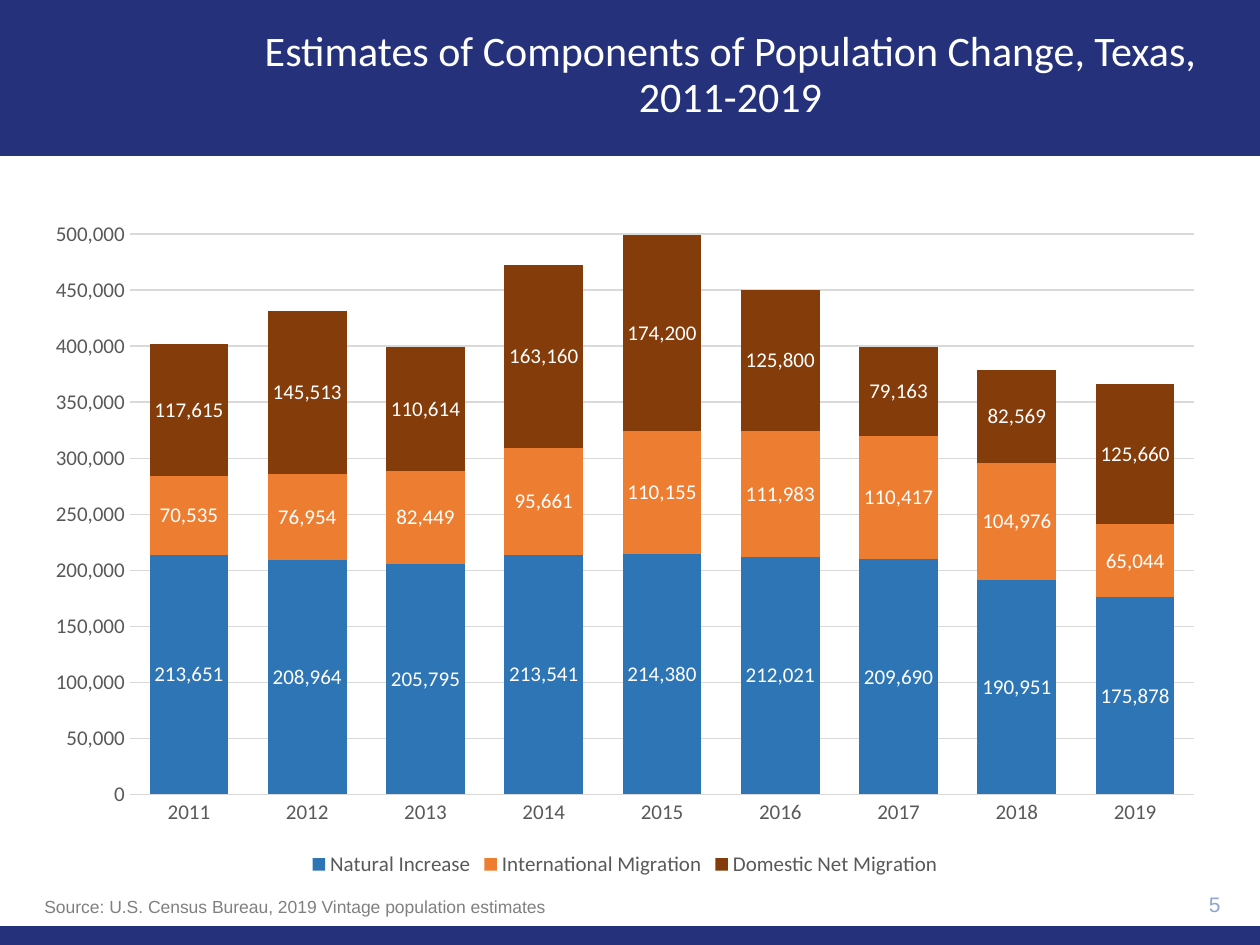
from pptx import Presentation
from pptx import util as u
from pptx.chart.data import CategoryChartData
from pptx.dml.color import RGBColor
from pptx.enum import chart as charts, shapes, text

COLORS = {
    "navy": "25327B", "white": "FFFFFF", "number": "8FA5D1", "source": "808080",
    "axis": "595959", "grid": "D9D9D9",
    "blue": "2E75B6", "orange": "ED7D31", "brown": "843C0B",
}
SLIDE = (1260, 945)
BANDS = [(0, 0, 1260, 156), (0, 926, 1260, 19)]
# text, box, size, font, colour, alignment, anchor, line spacing
TEXTS = [
    ("Estimates of Components of Population Change, Texas, 2011-2019",
     (214, 13, 1033, 126), 24, "Calibri", "white",
     text.PP_ALIGN.CENTER, text.MSO_ANCHOR.MIDDLE, 0.9),
    ("5", (1121, 883, 112, 43), 12, "Arial", "number",
     text.PP_ALIGN.RIGHT, text.MSO_ANCHOR.MIDDLE, 1.0),
    ("Source: U.S. Census Bureau, 2019 Vintage population estimates",
     (32, 890, 1250, 34), 10, "Arial", "source",
     text.PP_ALIGN.LEFT, text.MSO_ANCHOR.TOP, 1.0),
]
CHART_BOX = (32, 208, 1186, 674)
YEARS = [str(year) for year in range(2011, 2020)]
SERIES = [
    ("Natural Increase", "blue",
     (213651, 208964, 205795, 213541, 214380, 212021, 209690, 190951, 175878)),
    ("International Migration", "orange",
     (70535, 76954, 82449, 95661, 110155, 111983, 110417, 104976, 65044)),
    ("Domestic Net Migration", "brown",
     (117615, 145513, 110614, 163160, 174200, 125800, 79163, 82569, 125660)),
]
NUMBER_FORMAT = "#,##0"


def px(*lengths):
    return [u.Emu(round(length * 914400 / 126)) for length in lengths]


def rgb(name):
    return RGBColor.from_string(COLORS[name])


def style(font, size, name, color):
    font.size, font.name, font.color.rgb = u.Pt(size), name, rgb(color)


def add_band(page, box):
    band = page.shapes.add_shape(shapes.MSO_SHAPE.RECTANGLE, *px(*box))
    band.shadow.inherit = False
    band.fill.solid()
    band.fill.fore_color.rgb = rgb("navy")
    band.line.fill.background()


def add_text(page, words, box, size, font, color, align, anchor, spacing):
    frame = page.shapes.add_textbox(*px(*box)).text_frame
    frame.word_wrap = True
    frame.vertical_anchor = anchor
    frame.text = words
    para = frame.paragraphs[0]
    para.alignment, para.line_spacing = align, spacing
    style(para.runs[0].font, size, font, color)


def draw_line(line):
    line.color.rgb = rgb("grid")
    line.width = u.Pt(0.75)


def add_population_chart(page):
    data = CategoryChartData(number_format=NUMBER_FORMAT)
    data.categories = YEARS
    for name, _, values in SERIES:
        data.add_series(name, values)
    chart = page.shapes.add_chart(
        charts.XL_CHART_TYPE.COLUMN_STACKED, *px(*CHART_BOX), data).chart
    chart.has_title = False
    style(chart.font, 12, "Calibri", "axis")

    chart.has_legend = True
    chart.legend.position = charts.XL_LEGEND_POSITION.BOTTOM
    chart.legend.include_in_layout = False
    style(chart.legend.font, 12, "Calibri", "axis")

    for axis in (chart.category_axis, chart.value_axis):
        axis.major_tick_mark = axis.minor_tick_mark = charts.XL_TICK_MARK.NONE
        style(axis.tick_labels.font, 12, "Calibri", "axis")
    draw_line(chart.category_axis.format.line)
    value_axis = chart.value_axis
    value_axis.minimum_scale, value_axis.maximum_scale = 0, 500000
    value_axis.major_unit = 50000
    value_axis.tick_labels.number_format = NUMBER_FORMAT
    value_axis.tick_labels.number_format_is_linked = False
    value_axis.format.line.fill.background()
    value_axis.has_major_gridlines = True
    draw_line(value_axis.major_gridlines.format.line)

    plot = chart.plots[0]
    plot.gap_width, plot.overlap = 50, 100
    plot.vary_by_categories = False
    for series, (_, color, _) in zip(plot.series, SERIES):
        series.format.fill.solid()
        series.format.fill.fore_color.rgb = rgb(color)
        labels = series.data_labels
        labels.show_value = True
        labels.position = charts.XL_LABEL_POSITION.CENTER
        style(labels.font, 12, "Calibri", "white")


def main():
    deck = Presentation()
    deck.slide_width, deck.slide_height = px(*SLIDE)
    page = deck.slides.add_slide(deck.slide_layouts[6])
    for box in BANDS:
        add_band(page, box)
    for item in TEXTS:
        add_text(page, *item)
    add_population_chart(page)
    deck.save("out.pptx")


if __name__ == "__main__":
    main()
